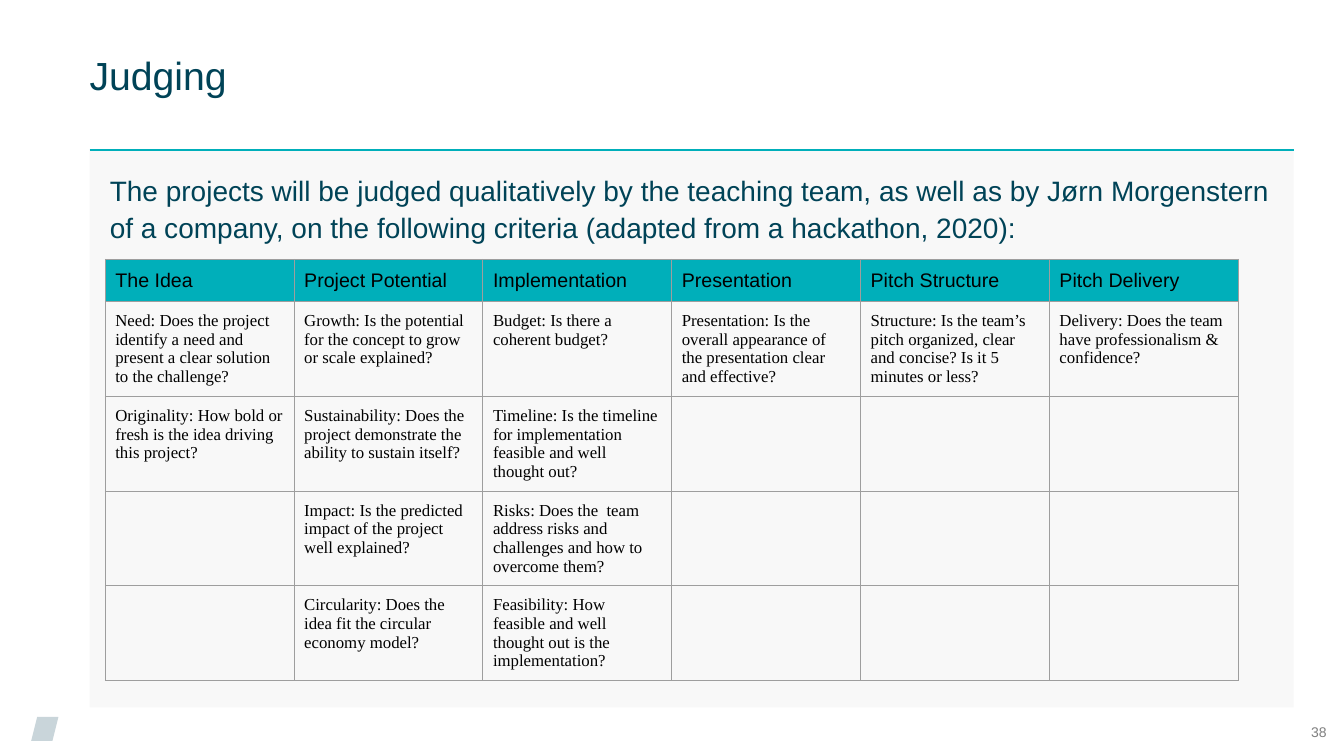
"""Build the judging criteria slide."""
from dataclasses import dataclass
from typing import Any

from lxml import etree
from pptx import Presentation
from pptx import util as u
from pptx.dml import color
from pptx.enum import shapes, text
from pptx.oxml import ns


@dataclass(frozen=True)
class Theme:
    ink: str = "004357"
    accent: str = "00AFBA"
    panel: str = "F2F2F2"
    mark: str = "C9D5DA"
    muted: str = "7F7F7F"
    grid: str = "9E9E9E"
    black: str = "000000"
    sans: str = "Arial"
    serif: str = "Times New Roman"
    title_size: float = 28
    body_size: float = 20
    header_size: float = 14
    cell_size: float = 12
    number_size: float = 10


@dataclass(frozen=True)
class Box:
    left: float
    top: float
    width: float
    height: float

    def lengths(self) -> tuple[u.Pt, ...]:
        return tuple(u.Pt(value) for value in (self.left, self.top, self.width, self.height))


@dataclass(frozen=True)
class TextStyle:
    name: str
    size: float
    colour: str


@dataclass(frozen=True)
class Criterion:
    heading: str
    questions: tuple[str, ...]


THEME = Theme()
TITLE_STYLE = TextStyle(THEME.sans, THEME.title_size, THEME.ink)
BODY_STYLE = TextStyle(THEME.sans, THEME.body_size, THEME.ink)
HEADER_STYLE = TextStyle(THEME.sans, THEME.header_size, THEME.black)
CELL_STYLE = TextStyle(THEME.serif, THEME.cell_size, THEME.black)
NUMBER_STYLE = TextStyle(THEME.sans, THEME.number_size, THEME.muted)

TITLE_BOX = Box(64, 0, 860, 106.6)
PANEL_BOX = Box(64, 107.2, 860, 398)
NUMBER_BOX = Box(924.5, 505, 35, 35)
MARK_BOX = Box(22.3, 512, 19.5, 17.3)
COLUMN_WIDTH = 134.9
ROW_HEIGHTS = (30.2, 67.5, 67.5, 67.5, 54)
TABLE_LEFT, TABLE_TOP = 75.2, 185.2

INTRODUCTION = (
    "The projects will be judged qualitatively by the teaching team, as well as by Jørn Morgenstern "
    "of a company, on the following criteria (adapted from a hackathon, 2020):"
)
CRITERIA = (
    Criterion("The Idea", (
        "Need: Does the project identify a need and present a clear solution to the challenge?",
        "Originality: How bold or fresh is the idea driving this project?",
    )),
    Criterion("Project Potential", (
        "Growth: Is the potential for the concept to grow or scale explained?",
        "Sustainability: Does the project demonstrate the ability to sustain itself?",
        "Impact: Is the predicted impact of the project well explained?",
        "Circularity: Does the idea fit the circular economy model?",
    )),
    Criterion("Implementation", (
        "Budget: Is there a coherent budget?",
        "Timeline: Is the timeline for implementation feasible and well thought out?",
        "Risks: Does the  team address risks and challenges and how to overcome them?",
        "Feasibility: How feasible and well thought out is the implementation?",
    )),
    Criterion("Presentation", (
        "Presentation: Is the overall appearance of the presentation clear and effective?",
    )),
    Criterion("Pitch Structure", (
        "Structure: Is the team’s pitch organized, clear and concise? Is it 5 minutes or less?",
    )),
    Criterion("Pitch Delivery", (
        "Delivery: Does the team have professionalism & confidence?",
    )),
)


def rgb(value: str) -> color.RGBColor:
    return color.RGBColor.from_string(value)


def apply(target: Any, values: dict[str, Any]) -> None:
    for name, value in values.items():
        setattr(target, name, value)


def margins(inset: float) -> dict[str, u.Pt]:
    return {f"margin_{side}": u.Pt(inset) for side in ("left", "top", "right", "bottom")}


def write(frame: Any, content: str, style: TextStyle, paragraph_format: dict[str, Any]) -> None:
    frame.text = content
    paragraph = frame.paragraphs[0]
    apply(paragraph, paragraph_format)
    for font in (paragraph.font, *(run.font for run in paragraph.runs)):
        apply(font, {"name": style.name, "size": u.Pt(style.size), "bold": False})
        font.color.rgb = rgb(style.colour)


def fill_text_shape(shape: Any, box: Box, content: str, style: TextStyle, inset: float,
                    anchor: Any, paragraph_format: dict[str, Any]) -> None:
    apply(shape, dict(zip(("left", "top", "width", "height"), box.lengths())))
    apply(shape.text_frame, {"word_wrap": True, "auto_size": text.MSO_AUTO_SIZE.NONE,
                             "vertical_anchor": anchor, **margins(inset)})
    write(shape.text_frame, content, style, paragraph_format)


def remove_bullet(paragraph: Any) -> None:
    properties = paragraph._p.get_or_add_pPr()
    apply_xml = {"marL": "0", "indent": "0"}
    for name, value in apply_xml.items():
        properties.set(name, value)
    etree.SubElement(properties, ns.qn("a:buNone"))


def add_plain_shape(slide: Any, kind: Any, box: Box, colour: str) -> Any:
    shape = slide.shapes.add_shape(kind, *box.lengths())
    shape.shadow.inherit = False
    shape.fill.solid()
    shape.fill.fore_color.rgb = rgb(colour)
    shape.line.fill.background()
    return shape


def add_background(slide: Any) -> None:
    mark = add_plain_shape(slide, shapes.MSO_SHAPE.PARALLELOGRAM, MARK_BOX, THEME.mark)
    panel = add_plain_shape(slide, shapes.MSO_SHAPE.RECTANGLE, PANEL_BOX, THEME.panel)
    panel_colour = panel.element.spPr.find(".//" + ns.qn("a:srgbClr"))
    etree.SubElement(panel_colour, ns.qn("a:alpha"), val="49000")
    left, top, width, _ = PANEL_BOX.lengths()
    rule = slide.shapes.add_connector(shapes.MSO_CONNECTOR.STRAIGHT, left, top, left + width, top)
    rule.line.color.rgb = rgb(THEME.accent)
    rule.line.width = u.Pt(2)
    etree.SubElement(rule.element.spPr, ns.qn("a:effectLst"))
    for shape in (rule, panel, mark):
        shape.element.getparent().insert(2, shape.element)


def add_borders(cell: Any) -> None:
    properties = cell._tc.get_or_add_tcPr()
    for index, side in enumerate(("lnL", "lnR", "lnT", "lnB")):
        border = etree.Element(ns.qn(f"a:{side}"), w=str(u.Pt(0.75)))
        fill = etree.SubElement(border, ns.qn("a:solidFill"))
        etree.SubElement(fill, ns.qn("a:srgbClr"), val=THEME.grid)
        properties.insert(index, border)


def add_criteria_table(slide: Any) -> None:
    box = Box(TABLE_LEFT, TABLE_TOP, COLUMN_WIDTH * len(CRITERIA), sum(ROW_HEIGHTS))
    table = slide.shapes.add_table(len(ROW_HEIGHTS), len(CRITERIA), *box.lengths()).table
    apply(table, {"first_row": False, "horz_banding": False})
    for row, height in zip(table.rows, ROW_HEIGHTS):
        row.height = u.Pt(height)
    for column_index, criterion in enumerate(CRITERIA):
        table.columns[column_index].width = u.Pt(COLUMN_WIDTH)
        entries = (criterion.heading, *criterion.questions)
        for row_index in range(len(ROW_HEIGHTS)):
            cell = table.cell(row_index, column_index)
            apply(cell, {"vertical_anchor": text.MSO_ANCHOR.TOP, **margins(7.2)})
            content = entries[row_index] if row_index < len(entries) else ""
            write(cell.text_frame, content, CELL_STYLE if row_index else HEADER_STYLE, {})
            if row_index:
                cell.fill.background()
            else:
                cell.fill.solid()
                cell.fill.fore_color.rgb = rgb(THEME.accent)
            add_borders(cell)


def main() -> None:
    presentation = Presentation()
    apply(presentation, {"slide_width": u.Pt(960), "slide_height": u.Pt(540)})
    slide = presentation.slides.add_slide(presentation.slide_layouts[1])
    add_background(slide)
    fill_text_shape(slide.shapes.title, TITLE_BOX, "Judging", TITLE_STYLE, 0,
                    text.MSO_ANCHOR.MIDDLE, {"alignment": text.PP_ALIGN.LEFT})
    body = slide.placeholders[1]
    fill_text_shape(body, PANEL_BOX, INTRODUCTION, BODY_STYLE, 14.4, text.MSO_ANCHOR.TOP,
                    {"space_before": u.Pt(10), "line_spacing": 1.1})
    remove_bullet(body.text_frame.paragraphs[0])
    number = slide.shapes.add_textbox(*NUMBER_BOX.lengths())
    fill_text_shape(number, NUMBER_BOX, "38", NUMBER_STYLE, 0,
                    text.MSO_ANCHOR.MIDDLE, {"alignment": text.PP_ALIGN.CENTER})
    add_criteria_table(slide)
    presentation.save("out.pptx")


if __name__ == "__main__":
    main()
